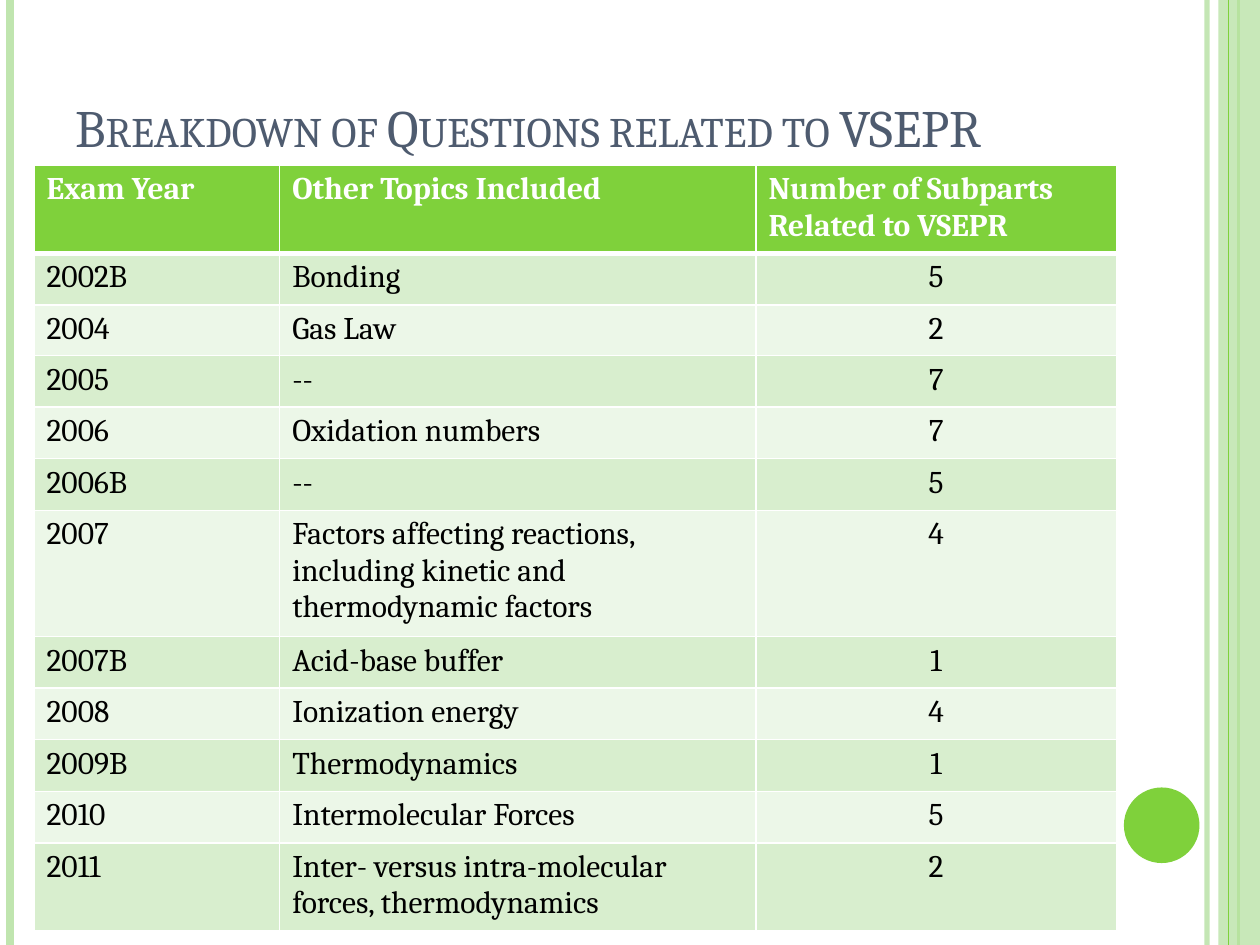
"""Build the slide that breaks down exam questions related to VSEPR."""
import pptx
import pptx.util
import pptx.dml.color
import pptx.enum.shapes
import pptx.enum.text
import pptx.oxml
import pptx.oxml.ns

Inches, Pt = pptx.util.Inches, pptx.util.Pt
FONT = "Cambria"
GREEN, PALE, WHITE = "7FD13B", "C0E5AF", "FFFFFF"
BANDS = ["D8EECE", "ECF7E8"]
TITLE = "Breakdown of Questions related to VSEPR"
HEAD = ("Exam Year", "Other Topics Included", "Number of Subparts Related to VSEPR")
EXAMS = [
    ("2002B", "Bonding", 5),
    ("2004", "Gas Law", 2),
    ("2005", "--", 7),
    ("2006", "Oxidation numbers", 7),
    ("2006B", "--", 5),
    ("2007", "Factors affecting reactions, including kinetic and thermodynamic factors", 4),
    ("2007B", "Acid-base buffer", 1),
    ("2008", "Ionization energy", 4),
    ("2009B", "Thermodynamics", 1),
    ("2010", "Intermolecular Forces", 5),
    ("2011", "Inter- versus intra-molecular forces, thermodynamics", 2),
]
WIDTHS = [1.95, 3.78, 2.86]
ROW, SHORT = 0.41, 0.39
BACK = [(9.58, PALE, 3, 93), (0.08, PALE, 4.5, 100), (9.83, GREEN, 1.5, 100)]
FRONT = [(9.75, GREEN, 0.75, 100)]


def paint(fill, color, alpha=100):
    fill.solid()
    fill.fore_color.rgb = pptx.dml.color.RGBColor.from_string(color)
    if alpha < 100:
        tone = fill._xPr.find(".//" + pptx.oxml.ns.qn("a:srgbClr"))
        node(tone, "alpha", f'val="{alpha * 1000}"')


def node(parent, tag, attrs="", inner=""):
    space = pptx.oxml.ns.nsdecls("a")
    parent.append(pptx.oxml.parse_xml(f"<a:{tag} {space} {attrs}>{inner}</a:{tag}>"))


def rule(slide, x, color, width, alpha):
    line = slide.shapes.add_connector(
        pptx.enum.shapes.MSO_CONNECTOR.STRAIGHT, Inches(x), 0, Inches(x), Inches(7.5))
    line.line.width = Pt(width)
    paint(line.line.fill, color, alpha)
    node(line._element.spPr, "effectLst")


def block(slide, kind, box, color, alpha=100):
    shape = slide.shapes.add_shape(kind, *map(Inches, box))
    shape.shadow.inherit = False
    shape.line.fill.background()
    paint(shape.fill, color, alpha)


def style(para, size, color, bold=False):
    font = para.runs[0].font
    font.name, font.size, font.bold = FONT, Pt(size), bold
    paint(font.fill, color)
    return font


def title(slide):
    box = slide.shapes.add_textbox(*map(Inches, (0.5, 0.05, 8.17, 1.25)))
    frame = box.text_frame
    frame.word_wrap = True
    frame.vertical_anchor = pptx.enum.text.MSO_ANCHOR.BOTTOM
    frame.text = TITLE
    font = style(frame.paragraphs[0], 30, "4E5B6F")
    font._element.set("cap", "small")


def border(cell, row):
    props = cell._tc.get_or_add_tcPr()
    thick = {0: "B", 1: "T"}.get(row)
    for side in "LRTB":
        width = Pt(3 if side == thick else 1)
        node(props, "ln" + side, f'w="{width}"',
             f'<a:solidFill><a:srgbClr val="{WHITE}"/></a:solidFill>')


def table(slide):
    rows = [HEAD] + EXAMS
    grid = slide.shapes.add_table(
        len(rows), len(HEAD), Inches(0.27), Inches(1.31),
        Inches(sum(WIDTHS)), Inches(ROW * len(rows))).table
    for col, width in zip(grid.columns, WIDTHS):
        col.width = Inches(width)
    for r, texts in enumerate(rows):
        grid.rows[r].height = Inches(SHORT if r == 2 else ROW)
        for c, text in enumerate(texts):
            cell = grid.cell(r, c)
            cell.text_frame.text = str(text)
            para = cell.text_frame.paragraphs[0]
            style(para, 18, "000000" if r else WHITE, bold=r == 0)
            if r and c == 2:
                para.alignment = pptx.enum.text.PP_ALIGN.CENTER
            border(cell, r)
            paint(cell.fill, BANDS[(r - 1) % 2] if r else GREEN)


def main():
    deck = pptx.Presentation()
    deck.slide_width, deck.slide_height = Inches(10), Inches(7.5)
    slide = deck.slides.add_slide(deck.slide_layouts[6])
    paint(slide.background.fill, WHITE)
    kinds = pptx.enum.shapes.MSO_SHAPE
    for spec in BACK:
        rule(slide, *spec)
    block(slide, kinds.RECTANGLE, (9.67, 0, 0.33, 7.5), PALE, 87)
    for spec in FRONT:
        rule(slide, *spec)
    block(slide, kinds.OVAL, (8.92, 6.25, 0.6, 0.6), GREEN)
    title(slide)
    table(slide)
    deck.save("out.pptx")


if __name__ == "__main__":
    main()
